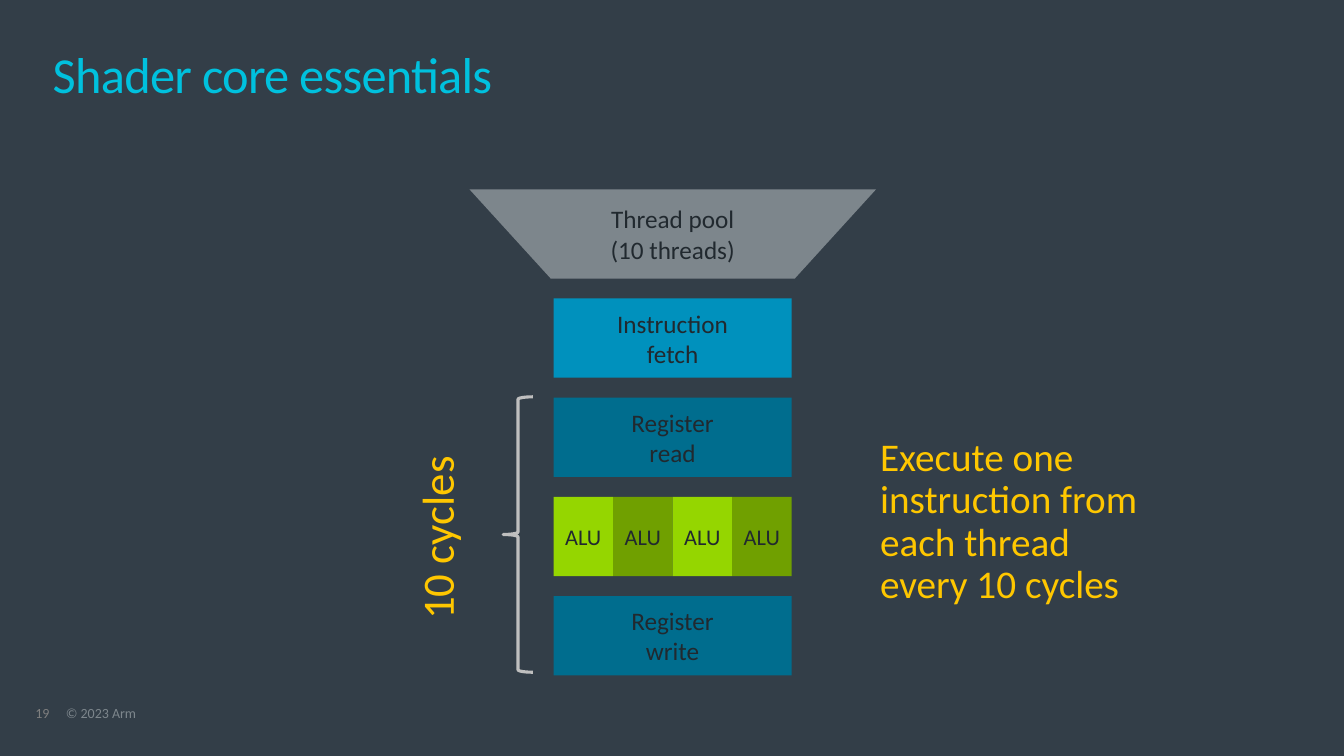
from pptx import Presentation
from pptx.dml.color import RGBColor
from pptx.enum import shapes, text
from pptx.util import Cm, Pt

COLORS = {
    "background": "333E48",
    "title": "00C1DE",
    "label": "21292F",
    "pool": "7D868C",
    "fetch": "0091BD",
    "register": "006D8E",
    "alu_light": "95D600",
    "alu_dark": "70A000",
    "note": "FFC700",
    "brace": "BFBFBF",
    "number": "7F7F7F",
}
FONT = "Calibri"
STAGE_LEFT, STAGE_TOP = 13.95, 7.52
STAGE_WIDTH, STAGE_HEIGHT, STAGE_PITCH = 6, 2, 2.5
ALU_COUNT = 4


def rgb(name):
    return RGBColor.from_string(COLORS[name])


def write(tf, content, size, color, align=text.PP_ALIGN.LEFT,
          anchor=text.MSO_ANCHOR.TOP, line=1.0, after=0, spacing=0, inset=0):
    tf.word_wrap = True
    tf.vertical_anchor = anchor
    tf.margin_left = tf.margin_right = Cm(inset)
    tf.margin_top = tf.margin_bottom = 0
    p = tf.paragraphs[0]
    p.text = content
    p.alignment = align
    p.line_spacing = line
    p.space_after = Pt(after)
    for r in p.runs:
        r.font.name = FONT
        r.font.size = Pt(size)
        r.font.color.rgb = rgb(color)
        if spacing:
            r.font._element.set("spc", str(int(spacing * 100)))


def add_label(s, content, left, top, width, height, rotation=0, **fmt):
    sp = s.shapes.add_textbox(Cm(left), Cm(top), Cm(width), Cm(height))
    sp.rotation = rotation
    write(sp.text_frame, content, **fmt)


def add_block(s, content, left, top, width, height, fill, size=18,
              kind=shapes.MSO_SHAPE.RECTANGLE):
    sp = s.shapes.add_shape(kind, Cm(left), Cm(top), Cm(width), Cm(height))
    sp.shadow.inherit = False
    sp.fill.solid()
    sp.fill.fore_color.rgb = rgb(fill)
    sp.line.fill.background()
    write(sp.text_frame, content, size=size, color="label",
          align=text.PP_ALIGN.CENTER, anchor=text.MSO_ANCHOR.MIDDLE)


def add_brace(s, left, top, width, height):
    sp = s.shapes.add_shape(shapes.MSO_SHAPE.LEFT_BRACE,
                            Cm(left), Cm(top), Cm(width), Cm(height))
    sp.shadow.inherit = False
    sp.fill.background()
    sp.line.color.rgb = rgb("brace")
    sp.line.width = Pt(2.25)


def stage_top(row):
    return STAGE_TOP + row * STAGE_PITCH


def add_pipeline(s):
    add_block(s, "Thread pool\n(10 threads)", 11.83, 4.77, 10.25, 2.25, "pool",
              kind=shapes.MSO_SHAPE.FLOWCHART_MANUAL_OPERATION)
    stages = [
        (0, "Instruction\nfetch", "fetch"),
        (1, "Register\nread", "register"),
        (3, "Register\nwrite", "register"),
    ]
    for row, name, fill in stages:
        add_block(s, name, STAGE_LEFT, stage_top(row),
                  STAGE_WIDTH, STAGE_HEIGHT, fill)
    alu_width = STAGE_WIDTH / ALU_COUNT
    for i in range(ALU_COUNT):
        add_block(s, "ALU", STAGE_LEFT + i * alu_width, stage_top(2),
                  alu_width, STAGE_HEIGHT,
                  "alu_dark" if i % 2 else "alu_light", size=16)


def main():
    prs = Presentation()
    prs.slide_width, prs.slide_height = Cm(33.87), Cm(19.05)
    s = prs.slides.add_slide(prs.slide_layouts[6])
    s.background.fill.solid()
    s.background.fill.fore_color.rgb = rgb("background")

    add_label(s, "19", 0.89, 17.8, 0.86, 0.38,
              size=10, color="number", line=0.9, after=6)
    add_label(s, "© 2023 Arm", 1.66, 17.8, 12.88, 0.38,
              size=10, color="pool", line=0.9, after=6)
    add_label(s, "Shader core essentials", 1.33, 1.33, 31.2, 1.45,
              size=36, color="title", line=0.85, spacing=-0.5)
    add_pipeline(s)
    add_brace(s, 12.68, 10, 0.75, 6.94)
    add_label(s, "10 cycles", 7.6, 12.95, 6.94, 1.22, rotation=270,
              size=32, color="note", align=text.PP_ALIGN.CENTER,
              line=0.9, after=6)
    add_label(s, "Execute one instruction from each thread every 10 cycles",
              22.18, 11.03, 7.13, 4.31,
              size=28, color="note", line=0.9, after=6)
    prs.save("out.pptx")


if __name__ == "__main__":
    main()
